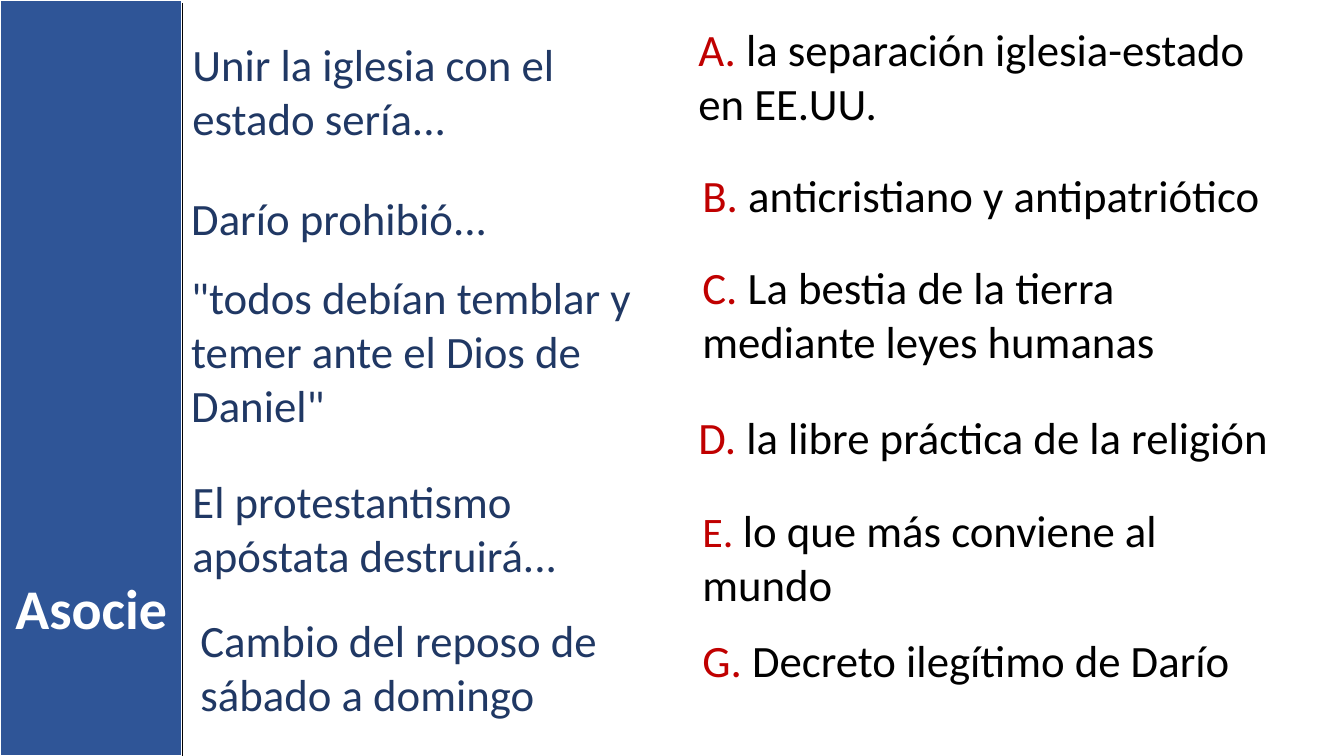
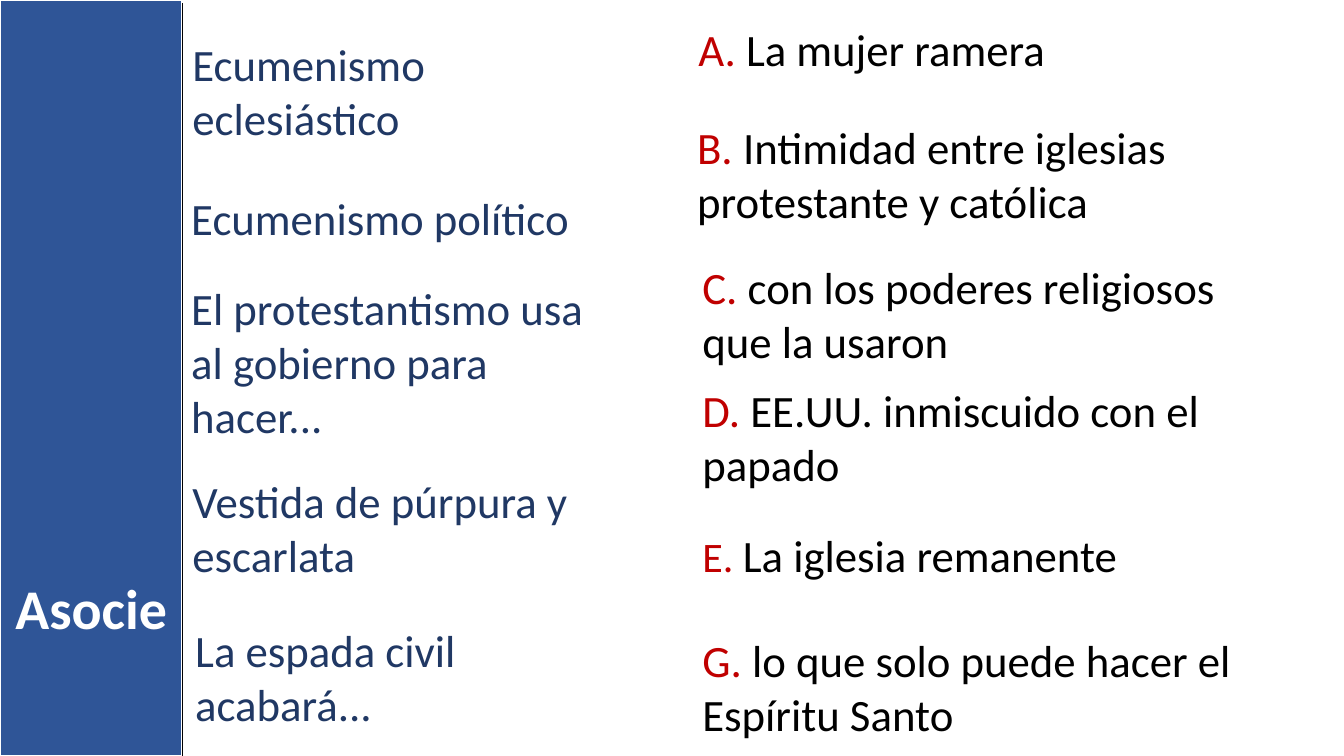
from pptx import Presentation
from pptx.dml.color import RGBColor
from pptx.enum.shapes import MSO_CONNECTOR, MSO_SHAPE
from pptx.enum.text import MSO_AUTO_SIZE, PP_ALIGN
from pptx.oxml.ns import qn
from pptx.util import Cm, Pt

RECTANGLE = MSO_SHAPE.RECTANGLE
STRAIGHT = MSO_CONNECTOR.STRAIGHT
FIT_TEXT = MSO_AUTO_SIZE.SHAPE_TO_FIT_TEXT
CENTER = PP_ALIGN.CENTER

SLIDE_WIDTH, SLIDE_HEIGHT = 33.87, 19.05
BAND_WIDTH = 4.6
FIRST_LINE, NEXT_LINE = 1.63, 1.37

EXERCISES = [
    {
        "prompts": [
            ("Unir la iglesia con el estado sería...", 4.6, 0.81, 9.68, 2),
            ("Darío prohibió...", 4.57, 4.67, 12.55, 1),
            ('"todos debían temblar y temer ante el Dios de Daniel"', 4.57, 6.68, 12.32, 3),
            ("El protestantismo apóstata destruirá...", 4.6, 11.81, 12.32, 2),
            ("Cambio del reposo de sábado a domingo", 4.8, 15.32, 12.12, 2),
        ],
        "answers": [
            ("A", "la separación iglesia-estado en EE.UU.", 17.35, 0.43, 15.29, 2),
            ("B", "anticristiano y antipatriótico", 17.45, 4.11, 15.57, 1),
            ("C", "La bestia de la tierra mediante leyes humanas", 17.45, 6.43, 15.19, 2),
            ("D", "la libre práctica de la religión", 17.35, 10.21, 15.34, 1),
            ("E", "lo que más conviene al mundo", 17.45, 12.55, 14.61, 2),
            ("G", "Decreto ilegítimo de Darío", 17.45, 15.82, 14.78, 1),
        ],
    },
    {
        "prompts": [
            ("Ecumenismo eclesiástico", 4.6, 0.81, 9.68, 2),
            ("Ecumenismo político", 4.57, 4.67, 12.55, 1),
            ("El protestantismo usa al gobierno para hacer...", 4.57, 6.96, 11.28, 3),
            ("Vestida de púrpura y escarlata", 4.6, 11.81, 12.32, 2),
            ("La espada civil acabará...", 4.67, 15.57, 11.07, 2),
        ],
        "answers": [
            ("A", "La mujer ramera", 17.35, 0.43, 15.29, 1),
            ("B", "Intimidad entre iglesias protestante y católica", 17.32, 2.9, 15.57, 2),
            ("C", "con los poderes religiosos que la usaron", 17.45, 6.43, 15.19, 2),
            ("D", "EE.UU. inmiscuido con el papado", 17.45, 9.53, 15.34, 2),
            ("E", "La iglesia remanente", 17.45, 13.18, 14.61, 1),
            ("G", "lo que solo puede hacer el Espíritu Santo", 17.45, 15.82, 14.78, 2),
        ],
    },
]


def color(value):
    """Turn a hex string into a colour."""
    return RGBColor.from_string(value)


class MatchingDeck:
    """Hold the style and the current slide of a matching exercise."""

    FONT = "Calibri"
    BAND, PROMPT, LETTER = "2F5597", "203864", "C00000"
    BLACK, WHITE = "000000", "FFFFFF"
    TEXT_SIZE, TITLE_SIZE = 32, 40
    LETTER_SIZES = {"E": 30}

    def __init__(self):
        """Start an empty widescreen presentation."""
        self.presentation = Presentation()
        self.presentation.slide_width = Cm(SLIDE_WIDTH)
        self.presentation.slide_height = Cm(SLIDE_HEIGHT)
        self.slide = None

    def add_slide(self):
        """Add a blank slide and make it current."""
        self.slide = self.presentation.slides.add_slide(self.presentation.slide_layouts[6])

    def band(self):
        """Draw the side band."""
        shape = self.slide.shapes.add_shape(RECTANGLE, 0, 0, Cm(BAND_WIDTH), Cm(SLIDE_HEIGHT))
        shape.shadow.inherit = False
        shape.fill.solid()
        shape.fill.fore_color.rgb = color(self.BAND)
        shape.line.color.rgb = color(self.WHITE)
        shape.line.width = Pt(1.5)

    def edge(self):
        """Draw the line along the band."""
        connector = self.slide.shapes.add_connector(
            STRAIGHT, Cm(BAND_WIDTH), Cm(0.08), Cm(BAND_WIDTH), Cm(SLIDE_HEIGHT))
        connector.line.color.rgb = color(self.BLACK)
        connector.line.width = Pt(1)
        properties = connector._element.spPr
        properties.append(properties.makeelement(qn("a:effectLst"), {}))

    def text_box(self, left, top, width, height, size):
        """Add a wrapping text box and return its paragraph."""
        box = self.slide.shapes.add_textbox(Cm(left), Cm(top), Cm(width), Cm(height))
        box.text_frame.word_wrap = True
        box.text_frame.auto_size = FIT_TEXT
        paragraph = box.text_frame.paragraphs[0]
        paragraph.font.name = self.FONT
        paragraph.font.size = Pt(size)
        return paragraph

    def item(self, left, top, width, lines):
        """Add a box tall enough for the given number of lines."""
        height = FIRST_LINE + NEXT_LINE * (lines - 1)
        return self.text_box(left, top, width, height, self.TEXT_SIZE)

    def prompt(self, text, *place):
        """Add a phrase to be matched."""
        paragraph = self.item(*place)
        paragraph.text = text
        paragraph.font.color.rgb = color(self.PROMPT)

    def answer(self, letter, text, *place):
        """Add a lettered answer."""
        paragraph = self.item(*place)
        label = paragraph.add_run()
        label.text = f"{letter}. "
        label.font.color.rgb = color(self.LETTER)
        if letter in self.LETTER_SIZES:
            label.font.size = Pt(self.LETTER_SIZES[letter])
        body = paragraph.add_run()
        body.text = text
        body.font.color.rgb = color(self.BLACK)

    def title(self, text):
        """Add the title on the band."""
        paragraph = self.text_box(0, 14.33, BAND_WIDTH, 1.96, self.TITLE_SIZE)
        paragraph.text = text
        paragraph.alignment = CENTER
        paragraph.font.bold = True
        paragraph.font.color.rgb = color(self.WHITE)

    def exercise(self, prompts, answers):
        """Build one whole matching slide."""
        self.add_slide()
        self.band()
        for prompt in prompts:
            self.prompt(*prompt)
        for answer in answers:
            self.answer(*answer)
        self.title("Asocie")
        self.edge()


def main():
    """Build and save the presentation."""
    deck = MatchingDeck()
    for exercise in EXERCISES:
        deck.exercise(**exercise)
    deck.presentation.save("out.pptx")


if __name__ == "__main__":
    main()
